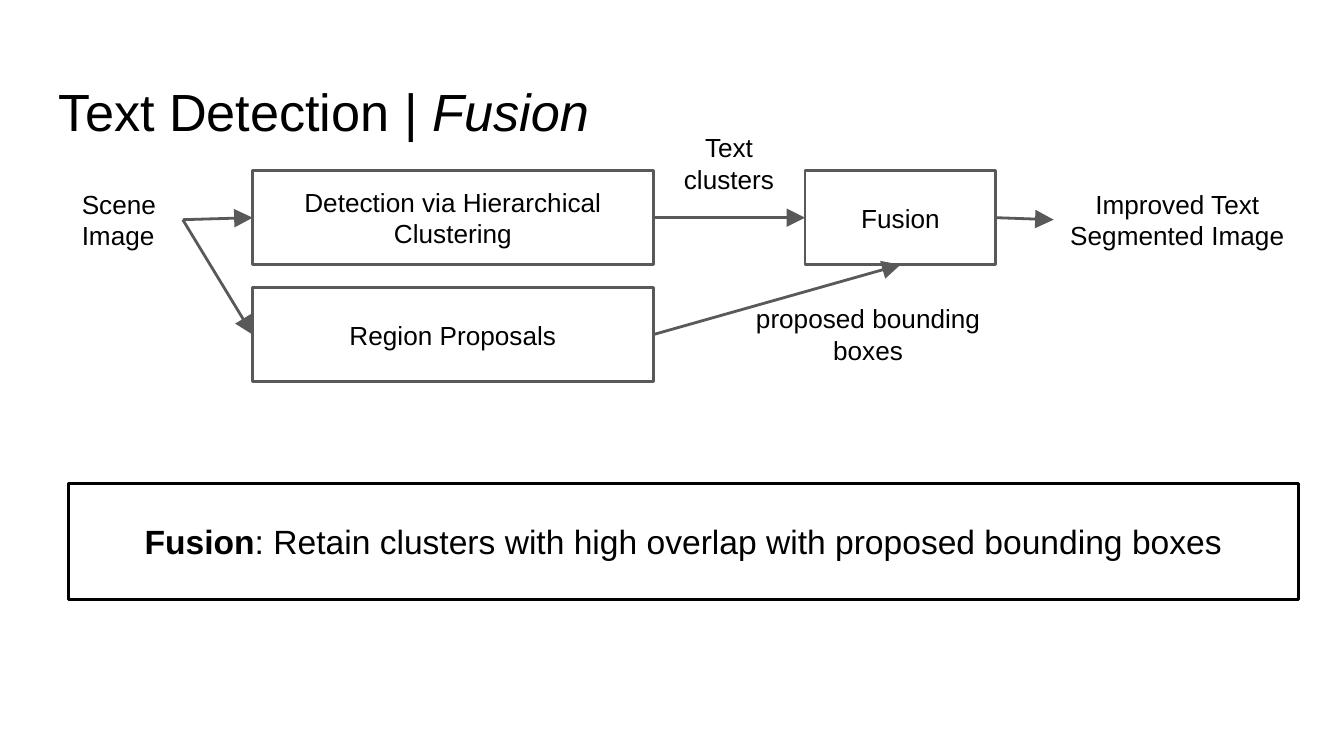
"""Build the text detection fusion slide."""
import pptx
import pptx.util
import pptx.dml.color
import pptx.enum.shapes
import pptx.enum.text
from lxml import etree
from pptx.oxml.ns import qn

Inches = pptx.util.Inches
Pt = pptx.util.Pt
Align = pptx.enum.text.PP_ALIGN
Anchor = pptx.enum.text.MSO_ANCHOR

BLACK, GRAY = "000000", "595959"
TOP, LEFT, BOTTOM, RIGHT = range(4)

TITLE = [("Text Detection | ", {}), ("Fusion", {"italic": True})]
NOTE = [
    ("Fusion", {"bold": True}),
    (": Retain clusters with high overlap with proposed bounding boxes", {}),
]
BOXES = {
    "cluster": ("Detection via Hierarchical Clustering", (1.88, 1.27, 2.98, 0.7)),
    "region": ("Region Proposals", (1.88, 2.14, 2.98, 0.7)),
    "fusion": ("Fusion", (5.99, 1.27, 1.42, 0.7)),
}
LABELS = {
    "scene": ("Scene Image", (0.51, 1.32, 0.85, 0.63), Align.LEFT),
    "text": ("Text clusters", (4.86, 0.9, 1.13, 0.63), Align.CENTER),
    "bounds": ("proposed bounding boxes", (5.51, 2.17, 1.9, 0.63), Align.CENTER),
    "result": ("Improved Text Segmented Image", (7.84, 1.32, 1.84, 0.63), Align.CENTER),
}
ARROWS = [
    ("scene", RIGHT, "cluster", LEFT),
    ("scene", RIGHT, "region", LEFT),
    ("cluster", RIGHT, "fusion", LEFT),
    ("region", RIGHT, "fusion", BOTTOM),
    ("fusion", RIGHT, "result", LEFT),
]


def color(code):
    return pptx.dml.color.RGBColor.from_string(code)


def write(shape, runs, size=14, align=Align.CENTER, anchor=Anchor.MIDDLE):
    frame = shape.text_frame
    frame.word_wrap = True
    frame.vertical_anchor = anchor
    frame.margin_left = frame.margin_right = Inches(0.1)
    frame.margin_top = frame.margin_bottom = Inches(0.1)
    para = frame.paragraphs[0]
    para.alignment = align
    for text, style in runs:
        run = para.add_run()
        run.text = text
        run.font.name = "Arial"
        run.font.size = Pt(size)
        run.font.color.rgb = color(BLACK)
        for key, value in style.items():
            setattr(run.font, key, value)


def add_text(slide, runs, place, **style):
    shape = slide.shapes.add_textbox(*map(Inches, place))
    write(shape, runs, **style)
    return shape


def add_box(slide, runs, place, edge=GRAY, **style):
    kind = pptx.enum.shapes.MSO_SHAPE.RECTANGLE
    shape = slide.shapes.add_shape(kind, *map(Inches, place))
    shape.shadow.inherit = False
    shape.fill.background()
    shape.line.color.rgb = color(edge)
    shape.line.width = Pt(1.5)
    write(shape, runs, **style)
    return shape


def add_arrow(slide, start, out, end, into):
    kind = pptx.enum.shapes.MSO_CONNECTOR.STRAIGHT
    arrow = slide.shapes.add_connector(kind, 0, 0, 0, 0)
    arrow.begin_connect(start, out)
    arrow.end_connect(end, into)
    arrow.line.color.rgb = color(GRAY)
    arrow.line.width = Pt(1.5)
    props = arrow.element.spPr
    head = {"type": "triangle", "w": "lg", "len": "lg"}
    etree.SubElement(props.find(qn("a:ln")), qn("a:tailEnd"), head)
    etree.SubElement(props, qn("a:effectLst"))


def main():
    deck = pptx.Presentation()
    deck.slide_width = Inches(10)
    deck.slide_height = deck.slide_width * 9 // 16
    slide = deck.slides.add_slide(deck.slide_layouts[6])
    add_text(slide, TITLE, (0.34, 0.49, 9.32, 0.63),
             size=28, align=Align.LEFT, anchor=Anchor.TOP)
    nodes = {}
    for name, (text, place) in BOXES.items():
        nodes[name] = add_box(slide, [(text, {})], place)
    for name, (text, place, align) in LABELS.items():
        nodes[name] = add_text(slide, [(text, {})], place, align=align)
    for start, out, end, into in ARROWS:
        add_arrow(slide, nodes[start], out, nodes[end], into)
    add_box(slide, NOTE, (0.51, 3.6, 9.15, 0.86), edge=BLACK, size=18)
    deck.save("out.pptx")


if __name__ == "__main__":
    main()
